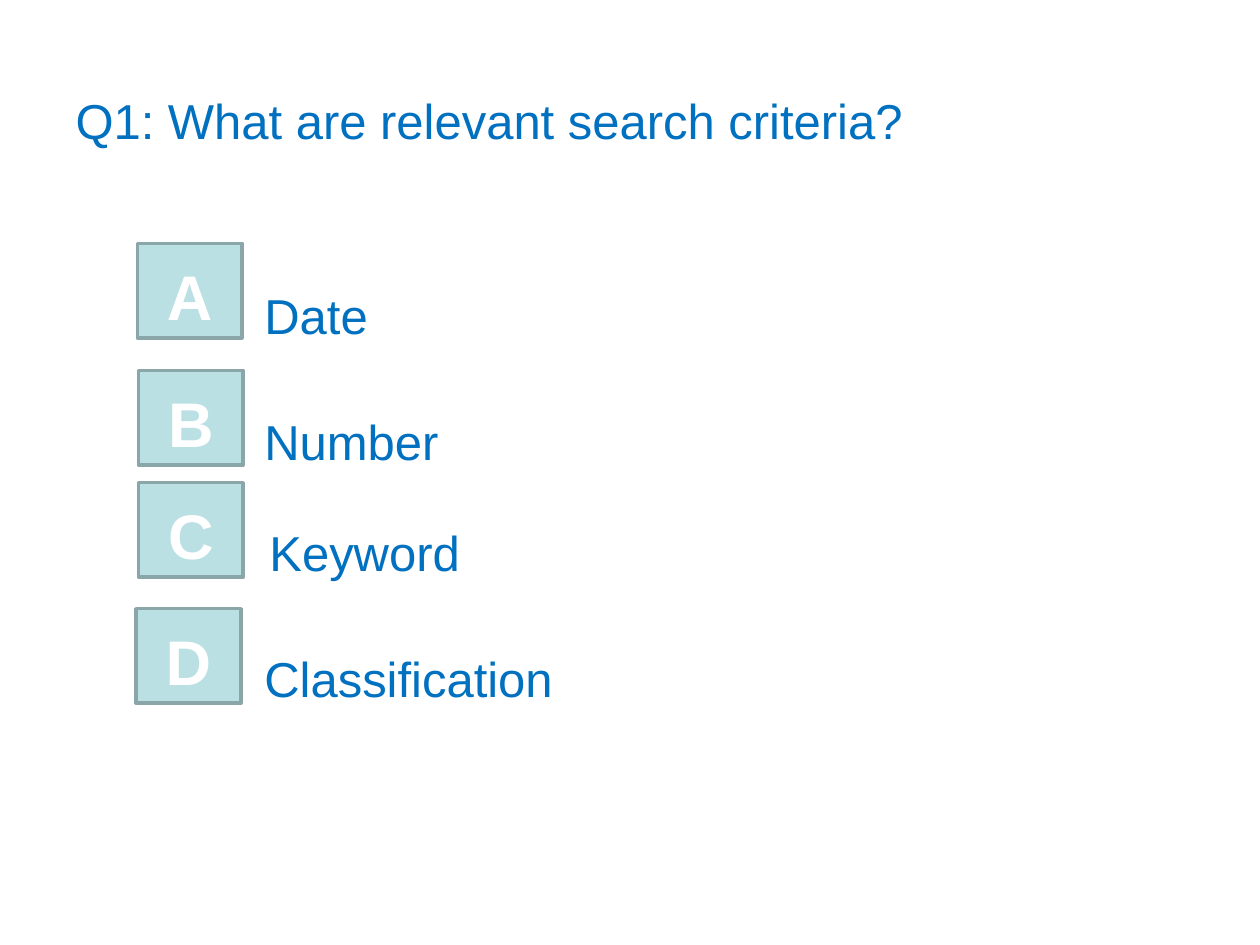
import pptx
import pptx.util
from pptx.dml.color import RGBColor
from pptx.enum.shapes import MSO_SHAPE
from pptx.enum.text import MSO_ANCHOR, PP_ALIGN
from pptx.util import Pt

COLORS = {"text": "0070C0", "fill": "BBE0E3", "line": "8AA6A8", "letter": "FFFFFF"}


def write(sp, text, size, color, align, anchor, top_inset, bold=False):
    tf = sp.text_frame
    tf.word_wrap = True
    tf.vertical_anchor = anchor
    tf.margin_left = tf.margin_right = Pt(7.2)
    tf.margin_top, tf.margin_bottom = Pt(top_inset), Pt(3.6)
    p = tf.paragraphs[0]
    p.text = text
    p.alignment = align
    p.space_before = Pt(0)
    p.font.name = "Arial"
    p.font.size = Pt(size)
    p.font.bold = bold
    p.font.color.rgb = RGBColor.from_string(COLORS[color])


prs = pptx.Presentation()
prs.slide_width, prs.slide_height = Pt(720), Pt(540)
s = prs.slides.add_slide(prs.slide_layouts[5])

title = s.shapes.title
title.left, title.top, title.width, title.height = Pt(36), Pt(21.6), Pt(648), Pt(90)
write(title, "Q1: What are relevant search criteria?", 28, "text",
      PP_ALIGN.LEFT, MSO_ANCHOR.MIDDLE, 8)

# letter, button left, button top, answer, answer left, top, width, height
answers = [
    ("A", 78.5, 139, "Date", 144, 157, 240, 39.6),
    ("B", 79.2, 211.7, "Number", 144, 229, 257.8, 41),
    ("C", 79.2, 275.8, "Keyword", 146.9, 292.3, 213, 44.6),
    ("D", 77.8, 347.8, "Classification", 144, 364.3, 216, 44.6),
]
for letter, x, y, answer, left, top, width, height in answers:
    box = s.shapes.add_textbox(Pt(left), Pt(top), Pt(width), Pt(height))
    write(box, answer, 28, "text", PP_ALIGN.LEFT, MSO_ANCHOR.TOP, 6.4)

    button = s.shapes.add_shape(MSO_SHAPE.ACTION_BUTTON_CUSTOM,
                                Pt(x), Pt(y), Pt(59.8), Pt(54))
    button.shadow.inherit = False
    button.fill.solid()
    button.fill.fore_color.rgb = RGBColor.from_string(COLORS["fill"])
    button.line.color.rgb = RGBColor.from_string(COLORS["line"])
    button.line.width = Pt(2)
    write(button, letter, 36, "letter", PP_ALIGN.CENTER, MSO_ANCHOR.MIDDLE, 9, True)

prs.save("out.pptx")
